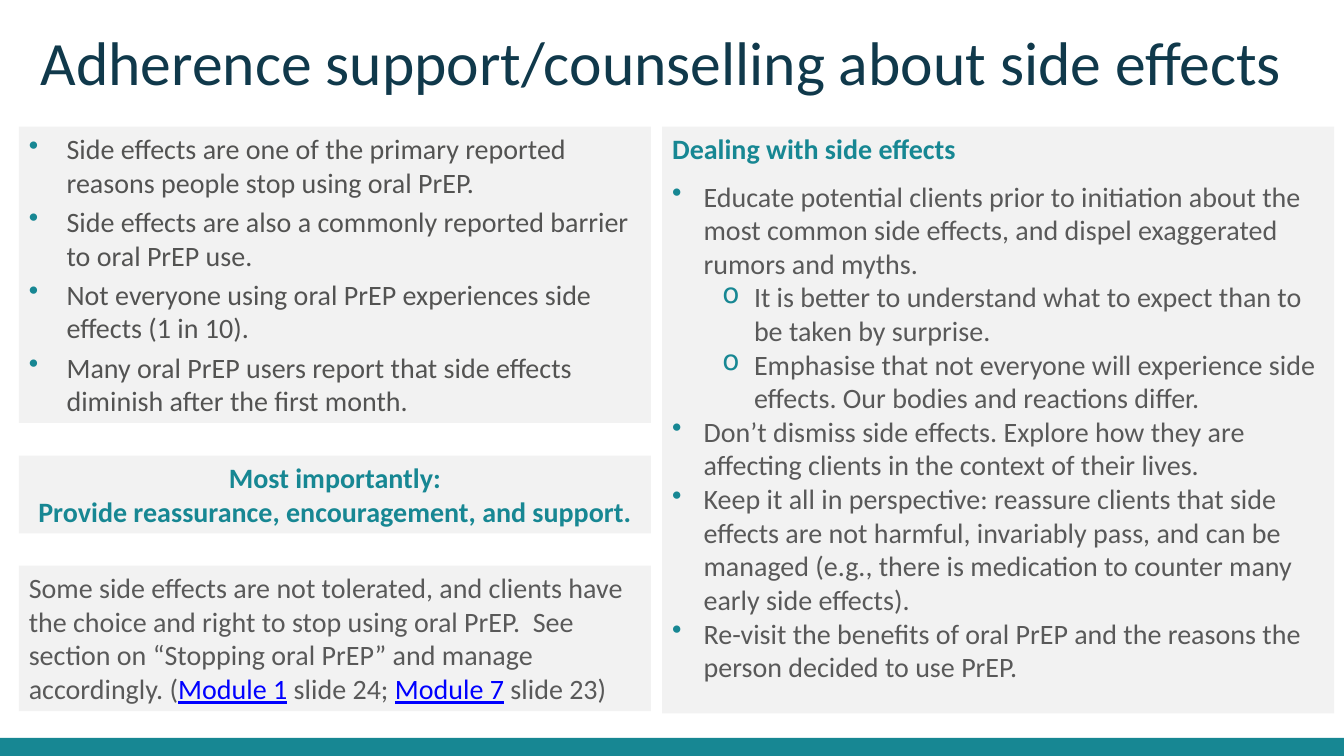
"""Build the slide on adherence support and counselling about side effects."""
from lxml.etree import SubElement
from pptx import Presentation
from pptx.dml.color import RGBColor
from pptx.enum.shapes import MSO_SHAPE
from pptx.enum.text import MSO_ANCHOR, PP_ALIGN
from pptx.oxml.ns import qn
from pptx.util import Pt

COLORS = {
    "teal": "178793",
    "navy": "10394B",
    "panel": "F2F2F2",
    "dark": "535352",
    "grey": "595959",
    "link": "0000FF",
}
LEFT, TOP, LEFT_WIDTH = 13.5, 90.5, 451.5

REASONS = [
    "Side effects are one of the primary reported reasons people stop using oral PrEP.",
    "Side effects are also a commonly reported barrier to oral PrEP use.",
    "Not everyone using oral PrEP experiences side effects (1 in 10).",
    "Many oral PrEP users report that side effects diminish after the first month.",
]
ADVICE = [
    (0, "Educate potential clients prior to initiation about the most common side effects, "
        "and dispel exaggerated rumors and myths."),
    (1, "It is better to understand what to expect than to be taken by surprise."),
    (1, "Emphasise that not everyone will experience side effects. Our bodies and reactions differ."),
    (0, "Don’t dismiss side effects. Explore how they are affecting clients in the context "
        "of their lives."),
    (0, "Keep it all in perspective: reassure clients that side effects are not harmful, "
        "invariably pass, and can be managed (e.g., there is medication to counter many "
        "early side effects)."),
    (0, "Re-visit the benefits of oral PrEP and the reasons the person decided to use PrEP."),
]
KEY_MESSAGE = ["Most importantly:", "Provide reassurance, encouragement, and support."]
STOPPING = [
    ("Some side effects are not tolerated, and clients have the choice and right to stop "
     "using oral PrEP.  See section on “Stopping oral PrEP” and manage accordingly. (", False),
    ("Module 1", True),
    (" slide 24; ", False),
    ("Module 7", True),
    (" slide 23)", False),
]


class SlideBuilder:
    def __init__(self, slide, font="Calibri", size=20):
        self.slide = slide
        self.font = font
        self.size = size

    def color(self, name):
        return RGBColor.from_string(COLORS[name])

    def rect(self, x, y, w, h, fill="panel"):
        sp = self.slide.shapes.add_shape(MSO_SHAPE.RECTANGLE, Pt(x), Pt(y), Pt(w), Pt(h))
        sp.shadow.inherit = False
        sp.fill.solid()
        sp.fill.fore_color.rgb = self.color(fill)
        sp.line.fill.background()
        tf = sp.text_frame
        tf.word_wrap = True
        tf.vertical_anchor = MSO_ANCHOR.TOP
        return tf

    def title(self, text, x, y, w, h):
        tf = self.slide.shapes.add_textbox(Pt(x), Pt(y), Pt(w), Pt(h)).text_frame
        tf.word_wrap = True
        tf.vertical_anchor = MSO_ANCHOR.BOTTOM
        tf.margin_top = tf.margin_bottom = 0
        p = self.paragraph(tf, text, "navy", size=44)
        p.line_spacing = Pt(44.8)

    def paragraph(self, tf, text, color, bold=False, size=None, align=PP_ALIGN.LEFT):
        p = tf.paragraphs[0]
        if p.runs:
            p = tf.add_paragraph()
        p.text = text
        p.alignment = align
        for r in p.runs:
            self.style(r, color, bold, size)
        return p

    def style(self, r, color, bold=False, size=None):
        r.font.name = self.font
        r.font.size = Pt(size or self.size)
        r.font.bold = bold
        r.font.color.rgb = self.color(color)

    def bullet(self, tf, text, color, char, margin, hang):
        p = self.paragraph(tf, text, color)
        pPr = p._p.get_or_add_pPr()
        pPr.set("marL", str(Pt(margin)))
        pPr.set("indent", str(Pt(-hang)))
        buClr = SubElement(pPr, qn("a:buClr"))
        SubElement(buClr, qn("a:srgbClr"), val=COLORS["teal"])
        SubElement(pPr, qn("a:buChar"), char=char)
        return p


def main():
    prs = Presentation()
    prs.slide_width, prs.slide_height = Pt(960), Pt(540)
    s = SlideBuilder(prs.slides.add_slide(prs.slide_layouts[6]))

    s.rect(0, 527, 960, 13, "teal")
    s.title("Adherence support/counselling about side effects", 22, 17.5, 920, 52.5)

    tf = s.rect(LEFT, TOP, LEFT_WIDTH, 211.5)
    for text in REASONS:
        p = s.bullet(tf, text, "dark", "•", 27, 27)
        p.space_before = Pt(4)

    tf = s.rect(473, TOP, 480, 419)
    p = s.paragraph(tf, "Dealing with side effects", "teal", bold=True)
    p.space_after = Pt(9.8)
    for level, text in ADVICE:
        p = s.bullet(tf, text, "grey", "•o"[level], 22.5 + 36 * level, 22.5)
        p.level = level

    tf = s.rect(LEFT, 325.5, LEFT_WIDTH, 55.5)
    for text in KEY_MESSAGE:
        s.paragraph(tf, text, "teal", bold=True, align=PP_ALIGN.CENTER)

    tf = s.rect(LEFT, 404, LEFT_WIDTH, 104)
    p = s.paragraph(tf, "", "grey")
    for text, is_link in STOPPING:
        r = p.add_run()
        r.text = text
        s.style(r, "link" if is_link else "grey")
        r.font.underline = is_link

    prs.save("out.pptx")


if __name__ == "__main__":
    main()
